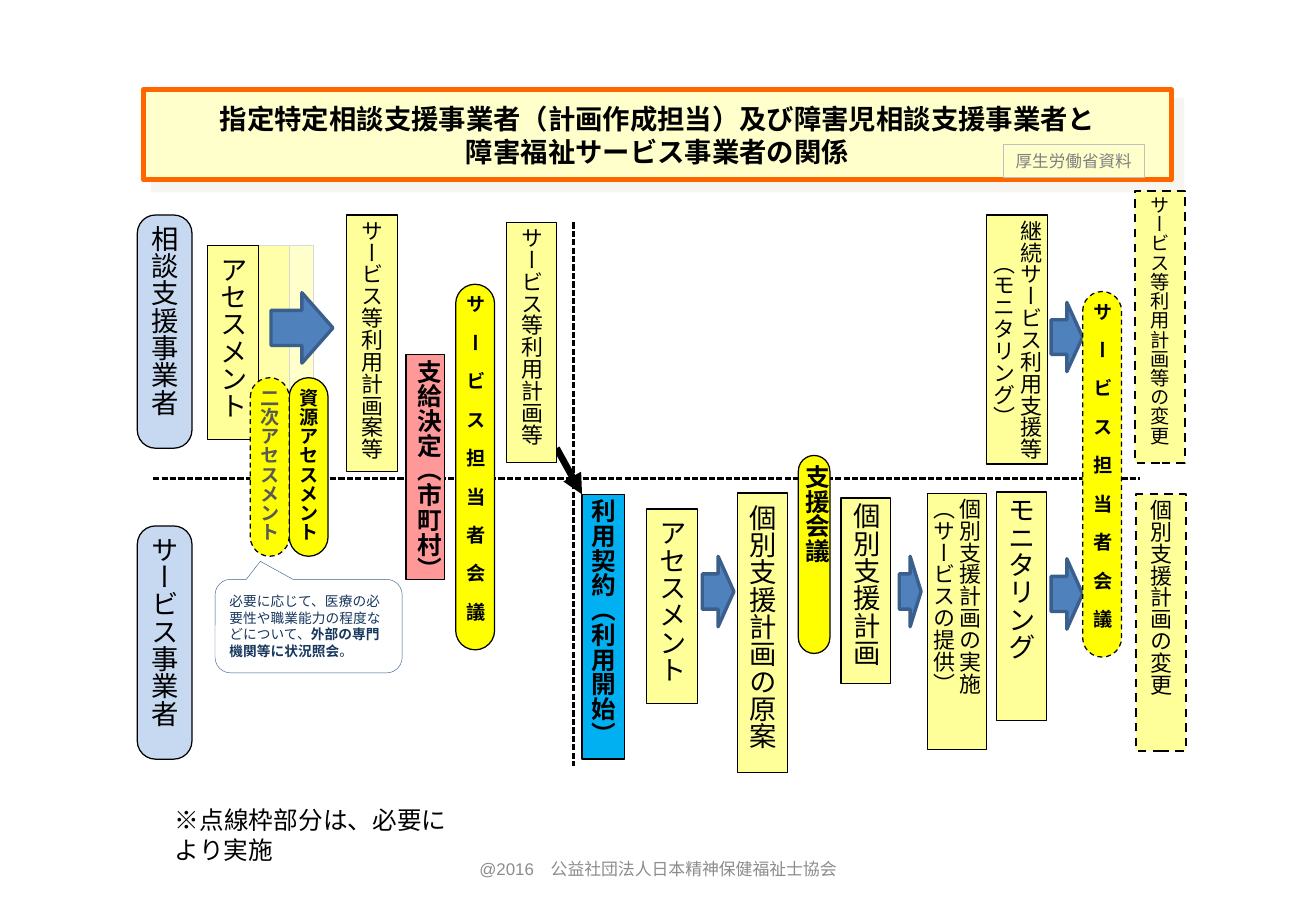
"""Build the slide relating planning offices to welfare service providers."""
from dataclasses import dataclass
from typing import Any, Optional

import lxml.etree
import pptx
import pptx.dml.color
import pptx.enum.dml
import pptx.enum.shapes
import pptx.enum.text
import pptx.oxml.ns
import pptx.util

PX = 9144
CJK = "Noto Sans CJK JP"
COLORS = {
    "black": "000000", "white": "FFFFFF", "step": "FFFF99", "actor": "C6D9F1",
    "decision": "FF9999", "pill": "FFFF00", "contract": "00B0F0",
    "arrow": "4F81BD", "arrow_edge": "3A5F8C", "banner": "FFFFCC",
    "orange": "FF6600", "shade": "EEECE1", "pale": "D9D9D9", "silver": "BFBFBF",
    "dim": "595959", "gray": "808080", "footer": "8C8C8C", "navy": "17375E",
}
SHAPE = pptx.enum.shapes.MSO_SHAPE
DASH = pptx.enum.dml.MSO_LINE
ALIGN = pptx.enum.text.PP_ALIGN
ANCHOR = pptx.enum.text.MSO_ANCHOR
FIT = pptx.enum.text.MSO_AUTO_SIZE


@dataclass(frozen=True)
class Style:
    shape: Any = SHAPE.RECTANGLE
    fill: Optional[str] = "step"
    opacity: int = 100
    line: Optional[str] = "black"
    weight: float = 0.75
    dash: Any = None
    adjust: tuple[float, ...] = ()
    inset: tuple[int, int] = (8, 4)
    vertical: bool = True
    wrap: bool = False
    anchor: Any = ANCHOR.MIDDLE
    align: Any = ALIGN.CENTER
    fit: Any = FIT.NONE
    spacing: Optional[float] = None
    font: str = CJK
    size: float = 16.2
    bold: bool = False
    color: str = "black"


@dataclass(frozen=True)
class Box:
    style: Style
    at: tuple[int, int, int, int]
    text: str = ""


@dataclass(frozen=True)
class Line:
    start: tuple[int, int]
    end: tuple[int, int]
    weight: float = 1.25
    dash: Any = DASH.SQUARE_DOT
    head: bool = False


PILL = dict(shape=SHAPE.ROUNDED_RECTANGLE, fill="pill", adjust=(0.5,),
            inset=(3, 4), spacing=13.8, bold=True)
step = Style()
step_left = Style(align=ALIGN.LEFT)
step_indented = Style(align=ALIGN.LEFT, inset=(8, 9))
small_left = Style(align=ALIGN.LEFT, size=13)
small = Style(size=13)
change = Style(size=13, weight=1.25, dash=DASH.DASH)
change_small = Style(size=11.4, weight=1.25, dash=DASH.DASH)
actor = Style(shape=SHAPE.ROUNDED_RECTANGLE, fill="actor", adjust=(0.335,))
decision = Style(fill="decision", inset=(3, 4), spacing=13.8, size=14.6, bold=True)
contract = Style(fill="contract", inset=(3, 4), wrap=True, font="Arial", size=14.6, bold=True)
pill = Style(**PILL, size=11.4)
pill_large = Style(**PILL, size=14.6)
pill_dashed = Style(**PILL, size=11.4, dash=DASH.DASH)
pill_dim = Style(**PILL, size=11.4, dash=DASH.DASH, color="dim")
arrow = Style(shape=SHAPE.RIGHT_ARROW, fill="arrow", line="arrow_edge", weight=2)
callout = Style(shape=SHAPE.ROUNDED_RECTANGULAR_CALLOUT, fill="white", line="arrow_edge",
                weight=0.25, adjust=(-0.258, -0.693, 0.167), vertical=False, wrap=True,
                align=ALIGN.LEFT, size=8.1, color="navy")
banner = Style(fill="banner", line="orange", weight=3, vertical=False, wrap=True, bold=True)
note = Style(shape=None, fill=None, line=None, inset=(6, 3), vertical=False, wrap=True,
             anchor=ANCHOR.TOP, align=ALIGN.LEFT, fit=FIT.SHAPE_TO_FIT_TEXT,
             font="Arial", size=14.6)
source = Style(shape=None, fill=None, line="silver", inset=(10, 5), vertical=False,
               anchor=ANCHOR.TOP, align=ALIGN.LEFT, fit=FIT.SHAPE_TO_FIT_TEXT,
               font="Arial", size=9.8, color="gray")
footer = Style(shape=None, fill=None, line=None, inset=(10, 5), vertical=False, wrap=True,
               font="Arial", size=10, color="footer")

TITLE = Box(banner, (118, 74, 846, 74),
            "指定特定相談支援事業者（計画作成担当）及び障害児相談支援事業者と\n障害福祉サービス事業者の関係")
MEETING = "サ　ー　ビ　ス　担　当　者　会　議"
FADES = [
    Box(Style(opacity=50, line="pale", weight=0.25), (197, 202, 61, 160)),
    Box(Style(opacity=65, line="pale", weight=0.25), (196, 202, 42, 160)),
]
LINES = [
    Line((126, 394), (938, 394)),
    Line((472, 183), (472, 631)),
    Line((458, 369), (479, 407), 4, None, True),
]
BOXES = [
    Box(step_indented, (171, 202, 42, 160), "アセスメント"),
    Box(small_left, (285, 177, 42, 211), "サービス等利用計画案等"),
    Box(step, (692, 410, 41, 153), "個別支援計画"),
    Box(step, (820, 405, 41, 188), "モニタリング"),
    Box(actor, (113, 177, 45, 192), "相談支援事業者"),
    Box(decision, (334, 292, 32, 185), "支給決定（市町村）"),
    Box(actor, (113, 433, 45, 192), "サービス事業者"),
    Box(step_indented, (532, 419, 42, 160), "アセスメント"),
    Box(small_left, (417, 183, 41, 198), "サービス等利用計画等"),
    Box(arrow, (578, 458, 26, 58)),
    Box(pill_large, (657, 375, 26, 163), "支援会議"),
    Box(small, (812, 177, 50, 205), "継続サービス利用支援等\n（モニタリング）"),
    Box(small, (763, 406, 49, 211), "個別支援計画の実施\n（サービスの提供）"),
    Box(arrow, (740, 458, 18, 58)),
    Box(change, (935, 407, 41, 211), "個別支援計画の変更"),
    Box(arrow, (865, 460, 26, 58)),
    Box(pill, (375, 234, 32, 301), MEETING),
    Box(step_indented, (607, 406, 41, 230), "個別支援計画の原案"),
    Box(change_small, (934, 157, 41, 224), "サービス等利用計画等の変更"),
    Box(arrow, (865, 249, 26, 57)),
    Box(pill_dashed, (891, 240, 32, 301), MEETING),
    Box(arrow, (223, 241, 51, 58)),
    Box(note, (138, 660, 239, 55), "※点線枠部分は、必要により実施"),
    Box(pill, (238, 311, 32, 147), "資源アセスメント"),
    Box(pill_dim, (206, 311, 32, 147), "二次アセスメント"),
    Box(contract, (479, 407, 35, 218), "利用契約（利用開始）"),
    Box(callout, (177, 477, 154, 77),
        "必要に応じて、医療の必要性や職業能力の程度などについて、*外部の専門機関等に状況照会*。"),
    Box(source, (826, 119, 116, 27), "厚生労働省資料"),
    Box(footer, (370, 695, 343, 40), "@2016　公益社団法人日本精神保健福祉士協会"),
]


def apply(target: Any, values: dict[str, Any]) -> None:
    for name, value in values.items():
        setattr(target, name, value)


def rgb(name: str) -> pptx.dml.color.RGBColor:
    return pptx.dml.color.RGBColor.from_string(COLORS[name])


def add_xml(parent: Any, tag: str, **attrs: str) -> Any:
    return lxml.etree.SubElement(parent, pptx.oxml.ns.qn(tag), attrs)


def write(sp: Any, box: Box) -> None:
    st, tf = box.style, sp.text_frame
    dx, dy = (n * PX for n in st.inset)
    apply(tf, dict(margin_left=dx, margin_right=dx, margin_top=dy, margin_bottom=dy,
                   word_wrap=st.wrap, vertical_anchor=st.anchor, auto_size=st.fit))
    if st.vertical:
        tf._txBody.bodyPr.set("vert", "eaVert")
    for i, text in enumerate(box.text.split("\n")):
        p = tf.add_paragraph() if i else tf.paragraphs[0]
        p.alignment = st.align
        if st.spacing:
            p.line_spacing = pptx.util.Pt(st.spacing)
        for j, part in enumerate(text.split("*")):
            r = p.add_run()
            r.text = part
            apply(r.font, dict(name=st.font, size=pptx.util.Pt(st.size),
                               bold=st.bold or j % 2 == 1))
            r.font.color.rgb = rgb(st.color)
            add_xml(r._r.get_or_add_rPr(), "a:ea", typeface=CJK)


def paint(sp: Any, st: Style) -> None:
    if st.fill:
        sp.fill.solid()
        sp.fill.fore_color.rgb = rgb(st.fill)
        if st.opacity < 100:
            srgb = sp._element.spPr.find(".//" + pptx.oxml.ns.qn("a:srgbClr"))
            add_xml(srgb, "a:alpha", val=str(st.opacity * 1000))
    if st.line:
        sp.line.color.rgb = rgb(st.line)
        apply(sp.line, dict(width=pptx.util.Pt(st.weight), dash_style=st.dash))


def draw_box(s: Any, box: Box) -> None:
    at = [n * PX for n in box.at]
    if box.style.shape is None:
        sp = s.shapes.add_textbox(*at)
    else:
        sp = s.shapes.add_shape(box.style.shape, *at)
        sp.shadow.inherit = False
        for i, value in enumerate(box.style.adjust):
            sp.adjustments[i] = value
    paint(sp, box.style)
    if box.text:
        write(sp, box)


def draw_line(s: Any, line: Line) -> None:
    ends = [n * PX for n in line.start + line.end]
    cn = s.shapes.add_connector(pptx.enum.shapes.MSO_CONNECTOR.STRAIGHT, *ends)
    cn.line.color.rgb = rgb("black")
    apply(cn.line, dict(width=pptx.util.Pt(line.weight), dash_style=line.dash))
    if line.head:
        add_xml(cn.line._get_or_add_ln(), "a:tailEnd", type="triangle")
    add_xml(cn._element.spPr, "a:effectLst")


def draw_title(s: Any, box: Box) -> None:
    sp = s.shapes.title
    apply(sp, dict(zip(("left", "top", "width", "height"), (n * PX for n in box.at))))
    sp_pr = sp._element.spPr
    geom = add_xml(sp_pr, "a:prstGeom", prst="roundRect")
    add_xml(add_xml(geom, "a:avLst"), "a:gd", name="adj", fmla="val 26500")
    paint(sp, box.style)
    shadow = add_xml(add_xml(sp_pr, "a:effectLst"), "a:outerShdw", dist="107950",
                     dir="2700000", algn="ctr", rotWithShape="0")
    add_xml(add_xml(shadow, "a:srgbClr", val=COLORS["shade"]), "a:alpha", val="50000")
    write(sp, box)


def main() -> None:
    prs = pptx.Presentation()
    apply(prs, dict(slide_width=1083 * PX, slide_height=750 * PX))
    s = prs.slides.add_slide(prs.slide_layouts[5])
    draw_title(s, TITLE)
    for box in FADES:
        draw_box(s, box)
    for line in LINES:
        draw_line(s, line)
    for box in BOXES:
        draw_box(s, box)
    prs.save("out.pptx")


if __name__ == "__main__":
    main()
